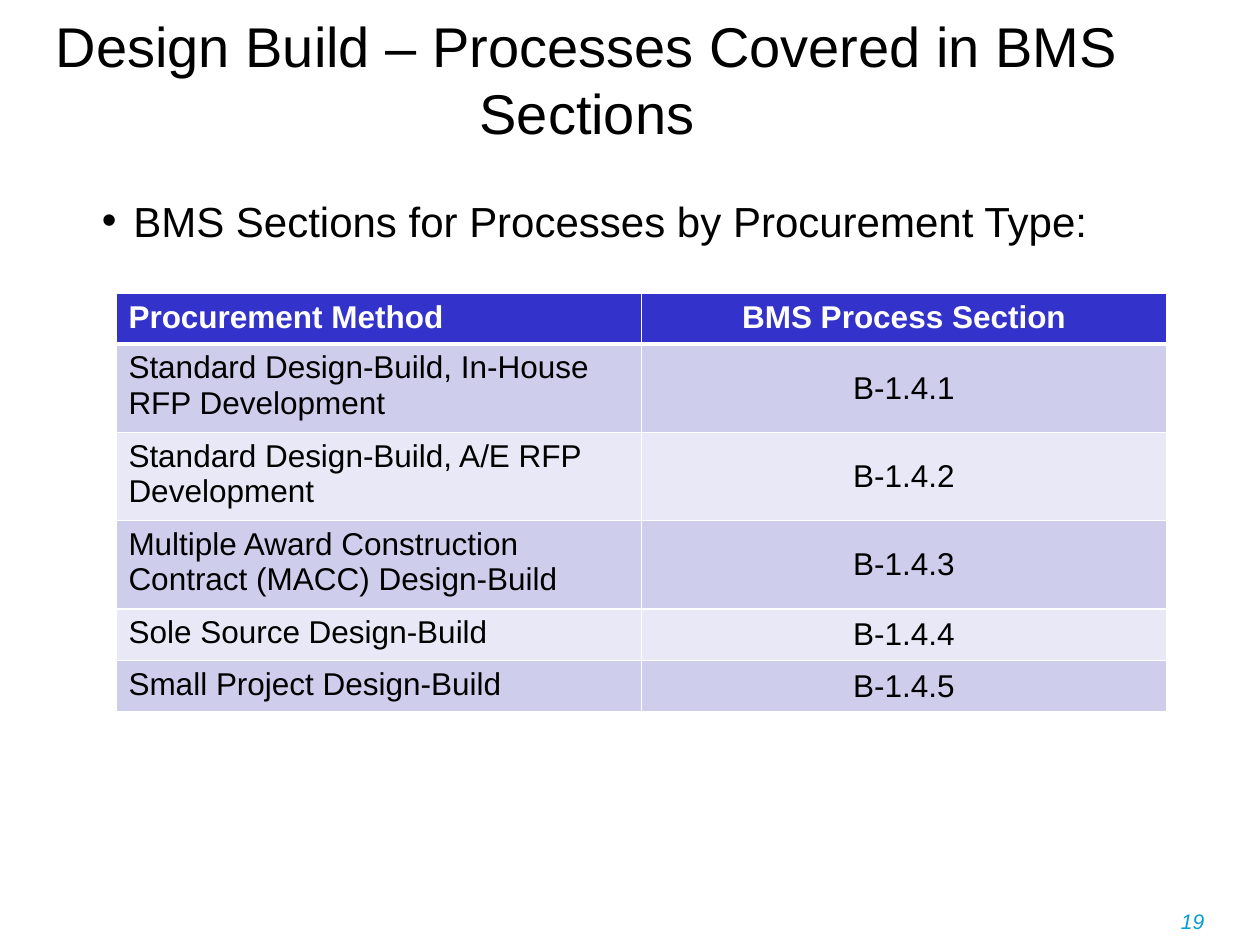
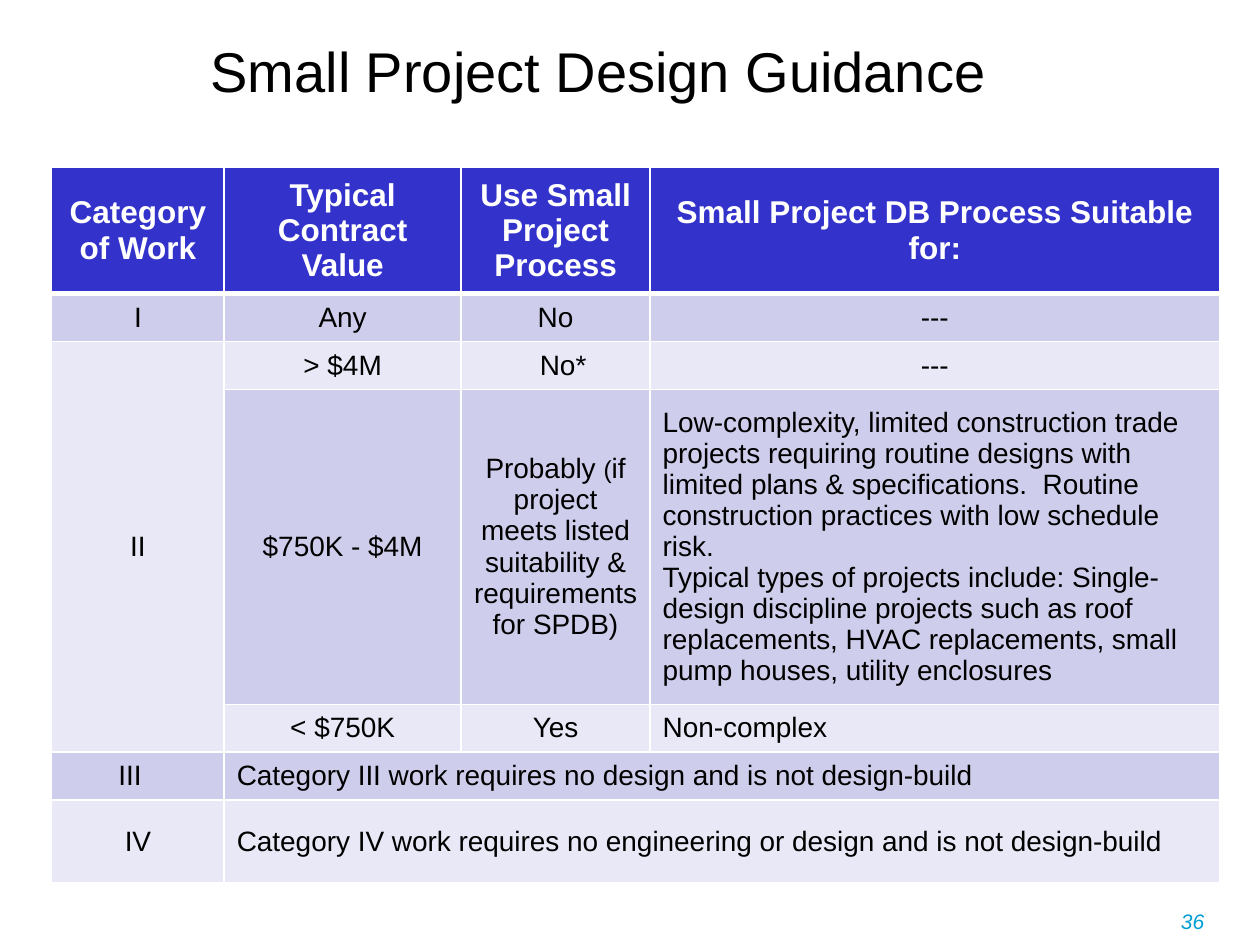
from dataclasses import dataclass

from lxml import etree
from pptx import Presentation
from pptx.dml.color import RGBColor
from pptx.enum.text import MSO_ANCHOR, PP_ALIGN
from pptx.oxml.ns import qn
from pptx.util import Inches, Pt

LEFT, CENTER = PP_ALIGN.LEFT, PP_ALIGN.CENTER
TOP, MIDDLE = MSO_ANCHOR.TOP, MSO_ANCHOR.MIDDLE
BLANK_LAYOUT = 6


@dataclass(frozen=True)
class Theme:
    font: str = "Arial"
    ink: str = "000000"
    white: str = "FFFFFF"
    header: str = "3333CC"
    bands: tuple = ("CECEEC", "E8E8F6")
    page_number: str = "009ED5"
    title_size: int = 32
    bullet_size: int = 24
    header_size: int = 18
    number_size: int = 12
    thin_line: int = 1
    thick_line: int = 3


THEME = Theme()


@dataclass
class Entry:
    """A table cell; each paragraph is a list of (text, size) spans.

    Anything left as None falls back to the column or table setting.
    """
    paragraphs: list
    align: PP_ALIGN = None
    indent: float = 0


def entry(*texts, align=None, indent=0):
    return Entry([[(text, None)] for text in texts], align, indent)


# Text helpers
def add_span(para, text, size, color=THEME.ink, bold=False, italic=False):
    span = para.add_run()
    span.text = text
    font = span.font
    font.name = THEME.font
    font.size = Pt(size)
    font.bold = bold
    font.italic = italic
    font.color.rgb = RGBColor.from_string(color)


def add_box(page, left, top, width, height, anchor=TOP):
    box = page.shapes.add_textbox(
        Inches(left), Inches(top), Inches(width), Inches(height))
    frame = box.text_frame
    frame.word_wrap = True
    frame.vertical_anchor = anchor
    return frame.paragraphs[0]


def set_indent(para, left, first=0):
    properties = para._p.get_or_add_pPr()
    properties.set("marL", str(Inches(left)))
    properties.set("indent", str(Inches(first)))
    return properties


# Page parts
def add_page(deck, title, number, left, top, width):
    page = deck.slides.add_slide(deck.slide_layouts[BLANK_LAYOUT])
    para = add_box(page, 8.93, 7.16, 1.07, 0.34)
    para.alignment = CENTER
    add_span(para, str(number), THEME.number_size, THEME.page_number,
             italic=True)
    para = add_box(page, left, top, width, 0.91, MIDDLE)
    para.alignment = CENTER
    add_span(para, title, THEME.title_size)
    return page


def add_bullet(page, text):
    para = add_box(page, 0.71, 1.5, 8.85, 5.24)
    properties = set_indent(para, 0.25, -0.25)
    etree.SubElement(properties, qn("a:buFont")).set("typeface", THEME.font)
    etree.SubElement(properties, qn("a:buChar")).set("char", "•")
    para.space_after = Pt(12)
    add_span(para, text, THEME.bullet_size)


# Table parts
def set_borders(cell, top, bottom):
    properties = cell._tc.get_or_add_tcPr()
    widths = {"lnL": THEME.thin_line, "lnR": THEME.thin_line,
              "lnT": top, "lnB": bottom}
    for side, width in widths.items():
        line = etree.SubElement(properties, qn(f"a:{side}"), w=str(Pt(width)))
        fill = etree.SubElement(line, qn("a:solidFill"))
        etree.SubElement(fill, qn("a:srgbClr"), val=THEME.white)


def fill_cell(cell, content, row, align, anchor, size):
    is_header = row == 0
    thin, thick = THEME.thin_line, THEME.thick_line
    set_borders(cell, thick if row == 1 else thin, thick if is_header else thin)
    cell.fill.solid()
    cell.fill.fore_color.rgb = RGBColor.from_string(
        THEME.header if is_header else THEME.bands[(row - 1) % 2])
    cell.vertical_anchor = anchor
    for index, spans in enumerate(content.paragraphs):
        frame = cell.text_frame
        para = frame.add_paragraph() if index else frame.paragraphs[0]
        if content.indent:
            set_indent(para, content.indent)
        para.alignment = align if content.align is None else content.align
        for text, span_size in spans:
            add_span(para, text, span_size or size,
                     THEME.white if is_header else THEME.ink, bold=is_header)


def add_grid(page, left, top, widths, heights, rows, aligns, anchors,
             body_size, header_anchor, merges=()):
    table = page.shapes.add_table(
        len(heights), len(widths), Inches(left), Inches(top),
        Inches(sum(widths)), Inches(sum(heights))).table
    for column, width in zip(table.columns, widths):
        column.width = Inches(width)
    for table_row, height in zip(table.rows, heights):
        table_row.height = Inches(height)
    for first, last in merges:
        table.cell(*first).merge(table.cell(*last))
    for row, contents in enumerate(rows):
        for column, content in enumerate(contents):
            if content is None:
                continue
            if isinstance(content, str):
                content = entry(content)
            fill_cell(table.cell(row, column), content, row, aligns[column],
                      anchors[column] if row else header_anchor,
                      body_size if row else THEME.header_size)


# Slides
def add_process_sections(deck):
    page = add_page(deck, "Design Build – Processes Covered in BMS Sections",
                    19, 0.26, 0.17, 8.8)
    add_bullet(page, "BMS Sections for Processes by Procurement Type:")
    methods = [
        "Standard Design-Build, In-House RFP Development",
        "Standard Design-Build, A/E RFP Development",
        "Multiple Award Construction Contract (MACC) Design-Build",
        "Sole Source Design-Build",
        "Small Project Design-Build",
    ]
    rows = [("Procurement Method", "BMS Process Section")]
    rows += [(method, f"B-1.4.{number}")
             for number, method in enumerate(methods, 1)]
    add_grid(page, 0.92, 2.33, [4.17] * 2, [0.4] + [0.66] * 3 + [0.41] * 2,
             rows, (LEFT, CENTER), (TOP, MIDDLE), 18, TOP)


def add_design_guidance(deck):
    page = add_page(deck, "Small Project Design Guidance", 36,
                    0.92, 0.1, 7.66)
    no_use = entry("---", align=CENTER)
    probably = Entry([[
        ("Probably ", None),
        ("(", 14),
        ("if project meets listed suitability & requirements for SPDB)", None),
    ]])
    suitable = entry(
        "Low-complexity, limited construction trade projects requiring "
        "routine designs with limited plans & specifications.  Routine "
        "construction practices with low schedule risk.",
        "Typical types of projects include: Single-design discipline "
        "projects such as roof replacements, HVAC replacements, small pump "
        "houses, utility enclosures")
    rows = [
        ("Category of Work", "Typical Contract Value",
         "Use Small Project Process",
         entry("Small Project DB Process Suitable for:", align=CENTER)),
        ("I", "Any", "No", no_use),
        ("II", "> $4M", entry("No*", indent=0.12), no_use),
        (None, "$750K - $4M", probably, suitable),
        (None, "< $750K", "Yes", "Non-complex"),
        (entry("III", align=LEFT, indent=0.43),
         entry("Category III work requires no design and is not design-build",
               align=LEFT)),
        ("IV",
         entry("Category IV work requires no engineering or design and is "
               "not design-build", align=LEFT)),
    ]
    merges = [((2, 0), (4, 0)), ((5, 1), (5, 3)), ((6, 1), (6, 3))]
    add_grid(page, 0.41, 1.33, [1.37, 1.88, 1.5, 4.52],
             [0.97, 0.38, 0.38, 2.43, 0.38, 0.38, 0.66], rows,
             (CENTER, CENTER, CENTER, LEFT), [MIDDLE] * 4, 16, MIDDLE, merges)


def main():
    deck = Presentation()
    deck.slide_width, deck.slide_height = Inches(10), Inches(7.5)
    add_process_sections(deck)
    add_design_guidance(deck)
    deck.save("out.pptx")


if __name__ == "__main__":
    main()
